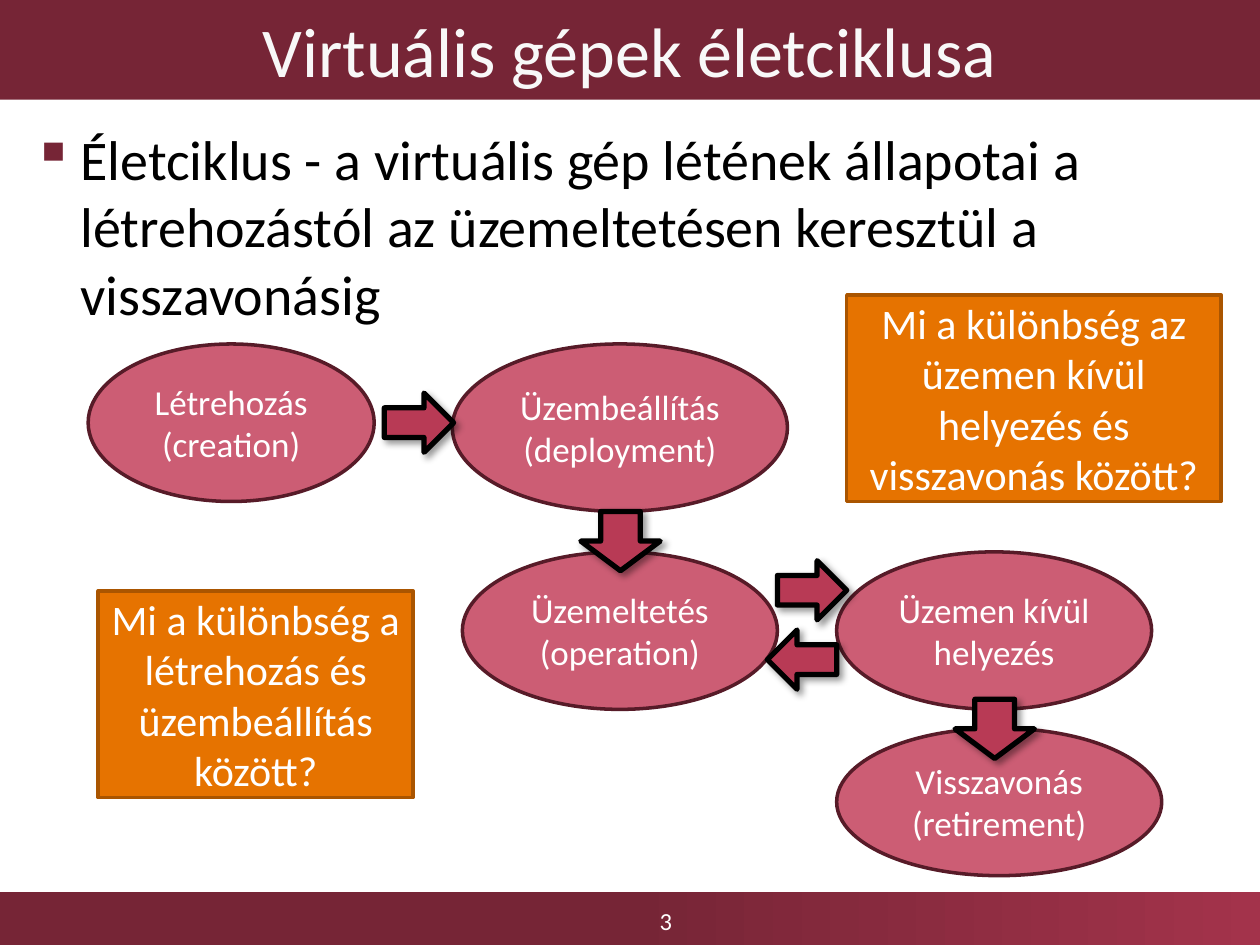
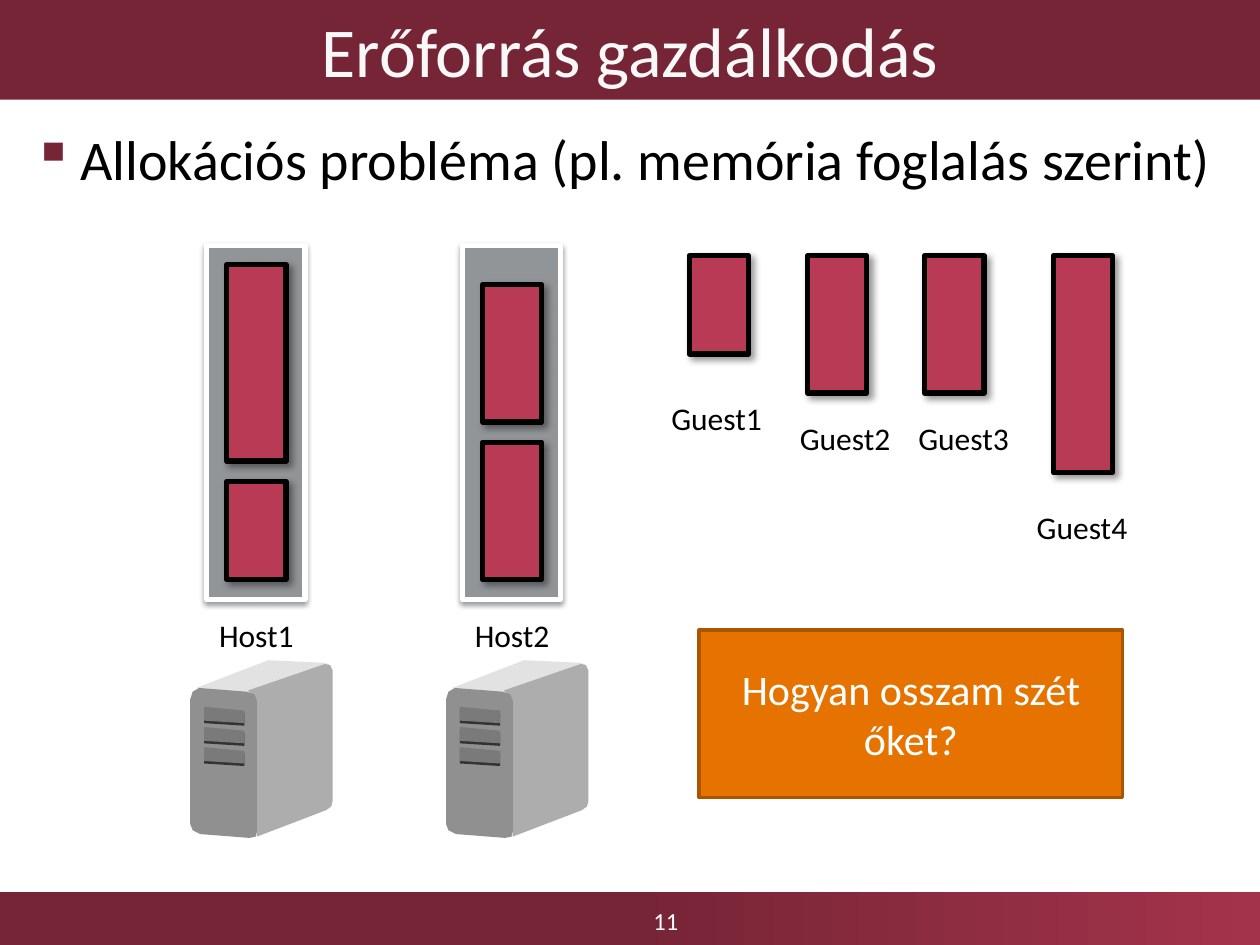
import dataclasses

import lxml.etree
import pptx
import pptx.dml.color
import pptx.enum.shapes
import pptx.enum.text
import pptx.oxml.ns
import pptx.util

Inches = pptx.util.Inches
Pt = pptx.util.Pt
SHAPE = pptx.enum.shapes.MSO_SHAPE
ALIGN = pptx.enum.text.PP_ALIGN
ANCHOR = pptx.enum.text.MSO_ANCHOR
qn = pptx.oxml.ns.qn


@dataclasses.dataclass(frozen=True)
class Theme:
    font: str = "Calibri"
    band: str = "762536"
    band_end: str = "A3334B"
    title: str = "F8F8F8"
    white: str = "FFFFFF"
    black: str = "000000"
    state: str = "CC5D74"
    state_line: str = "571B28"
    accent: str = "B83A55"
    question: str = "E67300"
    question_line: str = "AA5500"
    host: str = "929598"
    server_top: str = "E2E2E2"
    server_side: str = "ADADAD"
    server_front: str = "909090"
    vent: str = "7A7A7A"
    vent_edge: str = "333333"
    title_size: int = 40
    body_size: int = 32
    question_size: int = 24
    state_size: int = 20
    label_size: int = 18
    number_size: int = 14
    hard_shadow: tuple = (40, 4, 3, 45)
    soft_shadow: tuple = (38, 3.1, 1.6, 90)


@dataclasses.dataclass(frozen=True)
class Box:
    left: float
    top: float
    width: float
    height: float

    def inner(self, left, top, width, height):
        return Box(self.left + left, self.top + top, width, height)

    def lengths(self):
        return [Inches(value) for value in dataclasses.astuple(self)]


THEME = Theme()


def rgb(color):
    return pptx.dml.color.RGBColor.from_string(color)


def style_text(shape, size, color, align=ALIGN.CENTER, anchor=ANCHOR.MIDDLE, wrap=True):
    frame = shape.text_frame
    frame.word_wrap = wrap
    frame.vertical_anchor = anchor
    for paragraph in frame.paragraphs:
        paragraph.alignment = align
        paragraph.font.name = THEME.font
        paragraph.font.size = Pt(size)
        paragraph.font.color.rgb = rgb(color)


def write(shape, text, *style):
    shape.text_frame.text = text
    style_text(shape, *style)


def cast_shadow(shape, opacity, blur, distance, angle):
    effects = shape._element.spPr.find(qn("a:effectLst"))
    shadow = lxml.etree.SubElement(
        effects, qn("a:outerShdw"), blurRad=str(Pt(blur)), dist=str(Pt(distance)),
        dir=str(angle * 60000), rotWithShape="0")
    color = lxml.etree.SubElement(shadow, qn("a:srgbClr"), val=THEME.black)
    lxml.etree.SubElement(color, qn("a:alpha"), val=str(opacity * 1000))


def paint(shape, fill, line=None, line_width=2, shadow=None):
    shape.shadow.inherit = False
    shape.fill.solid()
    shape.fill.fore_color.rgb = rgb(fill)
    if line:
        shape.line.color.rgb = rgb(line)
        shape.line.width = Pt(line_width)
    else:
        shape.line.fill.background()
    if shadow:
        cast_shadow(shape, *shadow)


def add_shape(slide, kind, box, fill, *outline):
    shape = slide.shapes.add_shape(kind, *box.lengths())
    paint(shape, fill, *outline)
    return shape


def add_accent(slide, kind, box):
    return add_shape(slide, kind, box, THEME.accent, THEME.black, 3, THEME.hard_shadow)


def add_label(slide, box, text):
    label = slide.shapes.add_textbox(*box.lengths())
    write(label, text, THEME.label_size, THEME.black, ALIGN.LEFT, ANCHOR.TOP, False)


def add_question(slide, box, text):
    shape = add_shape(slide, SHAPE.RECTANGLE, box, THEME.question, THEME.question_line)
    write(shape, text, THEME.question_size, THEME.white)


def add_footer(slide, box, number):
    band = add_shape(slide, SHAPE.RECTANGLE, box, THEME.band)
    band.fill.gradient()
    band.fill.gradient_angle = 0
    stops = band.fill.gradient_stops
    for stop, position, color in zip(stops, (0.5, 1), (THEME.band, THEME.band_end)):
        stop.position = position
        stop.color.rgb = rgb(color)
    number_box = slide.shapes.add_textbox(*box.inner(3.66, 0.03, 3.25, 0.39).lengths())
    write(number_box, str(number), THEME.number_size, THEME.white)


def add_body(slide, box, text):
    body = slide.shapes.add_textbox(*box.lengths())
    body.text_frame.text = text
    properties = body.text_frame.paragraphs[0]._p.get_or_add_pPr()
    properties.set("marL", str(Inches(0.38)))
    properties.set("indent", str(Inches(-0.38)))
    bullet_color = lxml.etree.SubElement(properties, qn("a:buClr"))
    lxml.etree.SubElement(bullet_color, qn("a:srgbClr"), val=THEME.band)
    lxml.etree.SubElement(properties, qn("a:buChar"), char="▪")
    style_text(body, THEME.body_size, THEME.black, ALIGN.LEFT, ANCHOR.TOP)


def add_framed_slide(presentation, title, body, number):
    slide = presentation.slides.add_slide(presentation.slide_layouts[6])
    add_footer(slide, Box(0, 7.08, 10, 0.42), number)
    band = add_shape(slide, SHAPE.RECTANGLE, Box(0, 0, 10, 0.79), THEME.band)
    write(band, title, THEME.title_size, THEME.title)
    add_body(slide, Box(0.16, 0.94, 9.69, 6.05), body)
    return slide


def add_lifecycle(slide, box):
    states = [
        ("Létrehozás\n(creation)", 0, 0, 2.27, 1.25),
        ("Üzembeállítás\n(deployment)", 2.89, 0, 2.66, 1.33),
        ("Üzemeltetés\n(operation)", 2.97, 1.65, 2.5, 1.25),
        ("Üzemen kívül helyezés", 5.94, 1.65, 2.5, 1.25),
        ("Visszavonás\n(retirement)", 5.94, 3.05, 2.58, 1.17),
    ]
    for text, *place in states:
        state = add_shape(slide, SHAPE.OVAL, box.inner(*place), THEME.state, THEME.state_line)
        write(state, text, THEME.state_size, THEME.white)
    for left, top, rotation in [(2.35, 0.39, 0), (5.47, 1.72, 0), (5.39, 2.27, 180)]:
        arrow = add_accent(slide, SHAPE.RIGHT_ARROW, box.inner(left, top, 0.55, 0.47))
        arrow.rotation = rotation
    for left, top in [(3.91, 1.33), (6.88, 2.82)]:
        add_accent(slide, SHAPE.DOWN_ARROW, box.inner(left, top, 0.63, 0.47))


def add_polygon(slide, box, points, fill):
    corners = [(Inches(box.left + x), Inches(box.top + y)) for x, y in points]
    builder = slide.shapes.build_freeform(*corners[0])
    builder.add_line_segments(corners[1:], close=True)
    paint(builder.convert_to_shape(), fill)


def add_server(slide, box):
    top = [(0.05, 0.22), (0.62, 0), (1.05, 0.02), (1.1, 0.03), (1.12, 0.06), (0.48, 0.27)]
    side = [(0.46, 0.24), (1.07, 0.03), (1.11, 0.04), (1.13, 0.08), (1.13, 1.12),
            (1.12, 1.16), (1.08, 1.19), (0.53, 1.4), (0.53, 0.32)]
    front = [(0, 0.31), (0.02, 0.25), (0.07, 0.22), (0.45, 0.25), (0.51, 0.27),
             (0.53, 0.32), (0.53, 1.36), (0.52, 1.4), (0.47, 1.41), (0.08, 1.38),
             (0.02, 1.35), (0, 1.3)]
    vent = [(0, 0), (0.32, 0.03), (0.32, 0.13), (0, 0.11)]
    add_polygon(slide, box, top, THEME.server_top)
    add_polygon(slide, box, side, THEME.server_side)
    add_polygon(slide, box, front, THEME.server_front)
    for row in range(3):
        vent_box = box.inner(0.11, 0.37 + row * 0.16, 0.32, 0.13)
        add_polygon(slide, vent_box.inner(0, 0.02, 0.32, 0.13), vent, THEME.vent_edge)
        add_polygon(slide, vent_box, vent, THEME.vent)


def add_host(slide, box, name, guest_heights):
    add_server(slide, box.inner(-0.13, 3.29, 1.13, 1.41))
    add_shape(slide, SHAPE.RECTANGLE, box, THEME.host, THEME.white, 3, THEME.soft_shadow)
    add_label(slide, box.inner(0, 2.89, 0.8, 0.4), name)
    gap = 0.16
    base = box.height - gap
    for height in guest_heights:
        add_accent(slide, SHAPE.RECTANGLE, box.inner(gap, base - height, 0.47, height))
        base -= height + gap


def add_guests(slide, box):
    guests = [
        (0, 0.78, -0.24, 1.09),
        (0.94, 1.09, 0.78, 1.25),
        (1.87, 1.09, 1.72, 1.25),
        (2.89, 1.72, 2.66, 1.95),
    ]
    for index, (left, height, label_left, label_top) in enumerate(guests, 1):
        add_accent(slide, SHAPE.RECTANGLE, box.inner(left, 0, 0.47, height))
        add_label(slide, box.inner(label_left, label_top, 0.93, 0.4), f"Guest{index}")


def build_lifecycle_slide(presentation):
    slide = add_framed_slide(
        presentation, "Virtuális gépek életciklusa",
        "Életciklus - a virtuális gép létének állapotai a létrehozástól "
        "az üzemeltetésen keresztül a visszavonásig", 3)
    add_lifecycle(slide, Box(0.7, 2.73, 8.52, 4.22))
    add_question(slide, Box(0.78, 4.69, 2.5, 1.64),
                 "Mi a különbség a létrehozás és üzembeállítás között?")
    add_question(slide, Box(6.72, 2.34, 2.97, 1.64),
                 "Mi a különbség az üzemen kívül helyezés és visszavonás között?")


def build_allocation_slide(presentation):
    slide = add_framed_slide(
        presentation, "Erőforrás gazdálkodás",
        "Allokációs probléma (pl. memória foglalás szerint)", 11)
    for index, guest_heights in enumerate([(0.78, 1.56), (1.09, 1.09)]):
        host_box = Box(1.64 + index * 2.03, 1.95, 0.78, 2.81)
        add_host(slide, host_box, f"Host{index + 1}", guest_heights)
    add_guests(slide, Box(5.47, 2.03, 3.36, 2.35))
    add_question(slide, Box(5.55, 5, 3.36, 1.33), "Hogyan osszam szét őket?")


def main():
    presentation = pptx.Presentation()
    presentation.slide_width = Inches(10)
    presentation.slide_height = Inches(7.5)
    build_lifecycle_slide(presentation)
    build_allocation_slide(presentation)
    presentation.save("out.pptx")


if __name__ == "__main__":
    main()
